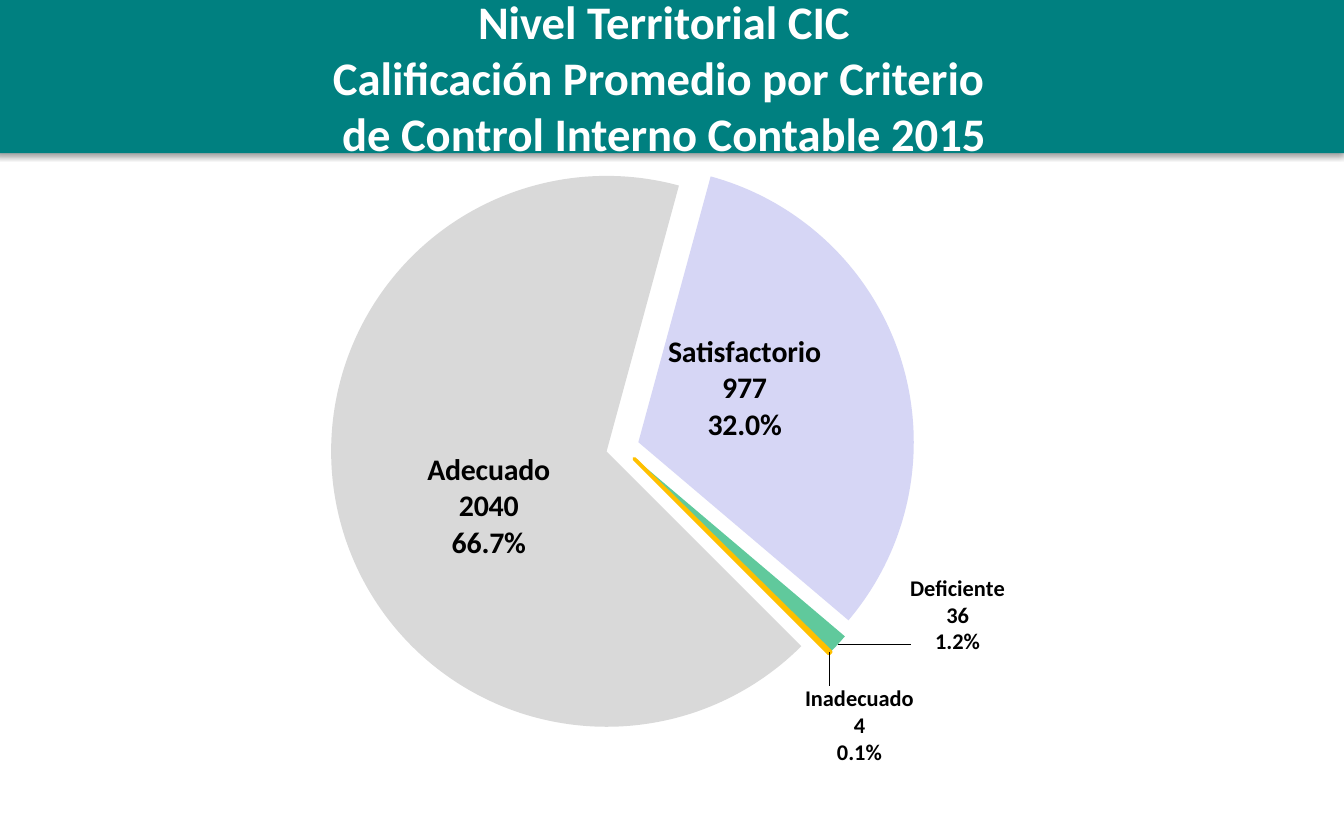
from lxml.etree import SubElement
from pptx import Presentation
from pptx.chart.data import CategoryChartData
from pptx.dml.color import RGBColor
from pptx.enum.chart import XL_CHART_TYPE, XL_LABEL_POSITION
from pptx.enum.shapes import MSO_SHAPE
from pptx.enum.text import MSO_ANCHOR, PP_ALIGN
from pptx.oxml import parse_xml
from pptx.oxml.ns import nsdecls, qn
from pptx.util import Inches, Pt

TITLE = ["Nivel Territorial CIC",
         "Calificación Promedio por Criterio ",
         "de Control Interno Contable 2015"]
IN, OUT = XL_LABEL_POSITION.CENTER, XL_LABEL_POSITION.OUTSIDE_END
# name, count, colour, label place, label size, label shift (share of the chart)
SLICES = [
    ("Adecuado", 2040, "D9D9D9", IN, "big", (0.015, 0.033)),
    ("Satisfactorio", 977, "D6D6F5", IN, "big", (-0.025, -0.02)),
    ("Deficiente", 36, "60C99C", OUT, "small", (0.065, -0.12)),
    ("Inadecuado", 4, "FF0000", OUT, "small", (-0.03, 0.045)),
]
THEME = dict(font="Calibri", band="008080", light="FFFFFF", dark="000000",
             edge="FFC000", title=25, big=16, small=12)
WIDE, HIGH = 10, 6.25
BAND = (-0.04, -0.02, 10.04, 1.16)
HEAD = (0.16, -0.1, 9.56, 1.18)
PIE = (1.14, 1.15, 7.56, 4.57)
PLOT = dict(x=0.126, y=0.001, w=0.672, h=0.951)


def rgb(code):
    return RGBColor.from_string(code)


def style(font, size, color, bold=True):
    font.name, font.size, font.bold = THEME["font"], Pt(size), bold
    font.color.rgb = rgb(color)


def layout(spots, inner=False):
    """Make a manual chart layout from shares of the chart's size."""
    root = parse_xml(f"<c:layout {nsdecls('c')}><c:manualLayout/></c:layout>")
    if inner:
        spots = {"layoutTarget": "inner", "xMode": "edge", "yMode": "edge", **spots}
    for tag, val in spots.items():
        SubElement(root[0], qn(f"c:{tag}")).set("val", str(val))
    return root


def add_band(slide):
    band = slide.shapes.add_shape(MSO_SHAPE.RECTANGLE, *map(Inches, BAND))
    band.shadow.inherit = False
    band.fill.solid()
    band.fill.fore_color.rgb = rgb(THEME["band"])
    band.line.fill.background()
    glow = band._element.spPr.find(qn("a:effectLst"))
    glow.append(parse_xml(
        f'<a:outerShdw {nsdecls("a")} blurRad="{Pt(3.1)}" dist="{Pt(1.6)}" '
        'dir="5400000" rotWithShape="0"><a:srgbClr val="000000">'
        '<a:alpha val="38000"/></a:srgbClr></a:outerShdw>'))


def add_title(slide):
    frame = slide.shapes.add_textbox(*map(Inches, HEAD)).text_frame
    frame.word_wrap = True
    frame.vertical_anchor = MSO_ANCHOR.TOP
    para = frame.paragraphs[0]
    para.alignment = PP_ALIGN.CENTER
    for i, line in enumerate(TITLE):
        if i:
            para.add_line_break()
        run = para.add_run()
        run.text = line
        style(run.font, THEME["title"], THEME["light"])


def add_pie(slide):
    data = CategoryChartData()
    data.categories = [row[0] for row in SLICES]
    data.add_series("Series 1", [row[1] for row in SLICES])
    chart = slide.shapes.add_chart(XL_CHART_TYPE.PIE, *map(Inches, PIE), data).chart
    chart.has_legend = chart.has_title = False
    style(chart.font, 10, THEME["dark"], False)
    plot = chart.plots[0]
    plot.vary_by_categories = True
    pie = chart._chartSpace.find(".//" + qn("c:pieChart"))
    area = pie.getparent()
    for old in area.findall(qn("c:layout")):
        area.remove(old)
    area.insert(0, layout(PLOT, True))
    for old in pie.findall(qn("c:firstSliceAng")):
        pie.remove(old)
    SubElement(pie, qn("c:firstSliceAng")).set("val", "135")

    series = plot.series[0]
    boom = parse_xml(f'<c:explosion {nsdecls("c")} val="6"/>')
    series._element.find(qn("c:tx")).addnext(boom)
    labels = series.data_labels
    labels.number_format, labels.number_format_is_linked = "0.0%", False
    labels.show_value = labels.show_percentage = labels.show_category_name = True
    style(labels.font, 11, THEME["dark"])
    for i, (name, count, color, place, size, shift) in enumerate(SLICES):
        point = series.points[i]
        point.format.fill.solid()
        point.format.fill.fore_color.rgb = rgb(color)
        if name == "Inadecuado":
            point.format.line.color.rgb = rgb(THEME["edge"])
            point.format.line.width = Pt(2)
        else:
            point.format.line.fill.background()
        style(point.data_label.font, THEME[size], THEME["dark"])
        point.data_label.position = place
    for tag, row in zip(series._element.iter(qn("c:dLbl")), SLICES):
        spot = layout(dict(zip("xy", row[-1])))
        tag.find(qn("c:idx")).addnext(spot)
        spot.addnext(parse_xml(
            f'<c:numFmt {nsdecls("c")} formatCode="0.0%" sourceLinked="0"/>'))
        for key in ("Val", "CatName", "Percent"):
            tag.find(qn(f"c:show{key}")).set("val", "1")
        SubElement(tag, qn("c:separator")).text = "\n"


deck = Presentation()
deck.slide_width, deck.slide_height = Inches(WIDE), Inches(HIGH)
page = deck.slides.add_slide(deck.slide_layouts[6])
add_band(page)
add_title(page)
add_pie(page)
deck.save("out.pptx")
